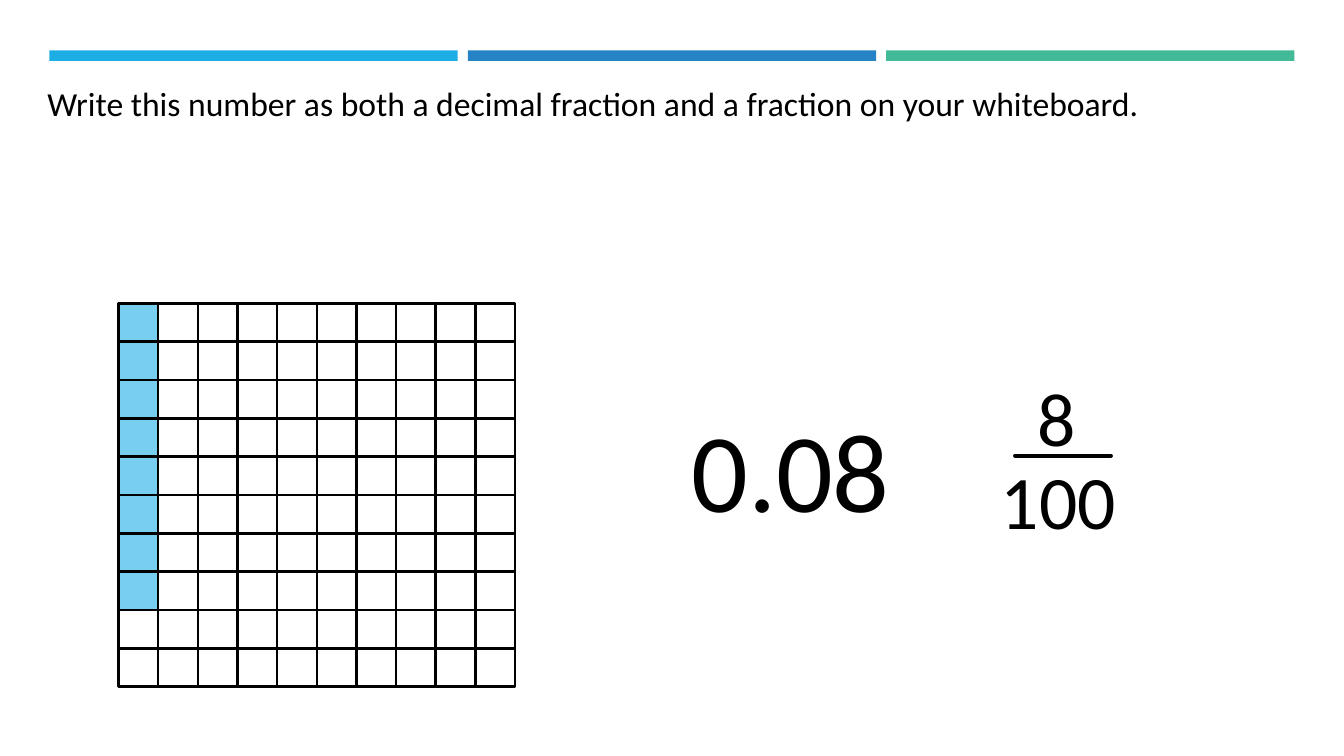
from dataclasses import dataclass

from lxml import etree
from pptx import Presentation
from pptx.dml.color import RGBColor
from pptx.enum.shapes import MSO_CONNECTOR, MSO_SHAPE
from pptx.enum.text import MSO_ANCHOR, MSO_AUTO_SIZE, PP_ALIGN
from pptx.oxml.ns import qn
from pptx.util import Inches, Pt

RECT = MSO_SHAPE.RECTANGLE
STRAIGHT = MSO_CONNECTOR.STRAIGHT
TOP = MSO_ANCHOR.TOP
LEFT = PP_ALIGN.LEFT
FIXED = MSO_AUTO_SIZE.NONE
GROW = MSO_AUTO_SIZE.SHAPE_TO_FIT_TEXT


@dataclass(frozen=True)
class Theme:
    font: str = "Calibri"
    ink: str = "000000"
    shade: str = "77CEEF"
    bars: tuple = ("1CADE4", "2683C6", "42BA97")
    small: int = 24
    mid: int = 54
    big: int = 80
    thin: float = 1.75
    thick: float = 3


class Board:
    """Draws on one slide, with lengths as percent of its width and height."""

    def __init__(self, deck, theme):
        self.deck = deck
        self.theme = theme
        self.slide = deck.slides.add_slide(deck.slide_layouts[6])
        self.shapes = self.slide.shapes

    def place(self, *spots):
        sides = (self.deck.slide_width, self.deck.slide_height)
        return [round(spot * sides[i % 2] / 100) for i, spot in enumerate(spots)]

    def stroke(self, line, width):
        line.color.rgb = RGBColor.from_string(self.theme.ink)
        line.width = Pt(width)

    def box(self, x, y, w, h, fill=None, width=None):
        shape = self.shapes.add_shape(RECT, *self.place(x, y, w, h))
        shape.shadow.inherit = False
        if fill:
            shape.fill.solid()
            shape.fill.fore_color.rgb = RGBColor.from_string(fill)
        else:
            shape.fill.background()
        if width:
            self.stroke(shape.line, width)
        else:
            shape.line.fill.background()

    def text(self, words, size, x, y, w, h, fit=GROW):
        frame = self.shapes.add_textbox(*self.place(x, y, w, h)).text_frame
        look = {"word_wrap": True, "auto_size": fit, "vertical_anchor": TOP}
        for name, value in look.items():
            setattr(frame, name, value)
        para = frame.paragraphs[0]
        para.alignment = LEFT
        run = para.add_run()
        run.text = words
        for name, value in {"name": self.theme.font, "size": Pt(size)}.items():
            setattr(run.font, name, value)
        run.font.color.rgb = RGBColor.from_string(self.theme.ink)

    def rule(self, x, y, end):
        line = self.shapes.add_connector(STRAIGHT, *self.place(x, y, end, y))
        self.stroke(line.line, self.theme.thick)
        props = line.element.spPr
        props.find(qn("a:ln")).set("cap", "rnd")
        etree.SubElement(props, qn("a:effectLst"))

    def bars(self, x, y, w, h, step):
        for i, fill in enumerate(self.theme.bars):
            self.box(x + i * step, y, w, h, fill)

    def grid(self, x, y, w, h, count, full):
        for i in range(count * count):
            col, row = divmod(i, count)
            fill = self.theme.shade if i < full else None
            self.box(x + col * w, y + row * h, w, h, fill, self.theme.thin)


def main():
    deck = Presentation()
    deck.slide_width, deck.slide_height = Inches(13.33), Inches(7.5)
    theme = Theme()
    board = Board(deck, theme)
    board.bars(3.68, 6.67, 30.38, 1.4, 31.13)
    board.grid(8.82, 40.13, 2.95, 5.07, count=10, full=8)
    board.text("0.08", theme.big, 50.7, 52.27, 16.4, 19.33)
    board.text("8", theme.mid, 76.43, 48.4, 8.18, 13.47)
    board.text("100", theme.mid, 73.73, 59.33, 11.33, 13.47)
    board.rule(75.53, 60.27, 82.65)
    task = "Write this number as both a decimal fraction and a fraction on your whiteboard."
    board.text(task, theme.small, 2.78, 10.27, 90.45, 14.8, FIXED)
    deck.save("out.pptx")


if __name__ == "__main__":
    main()
